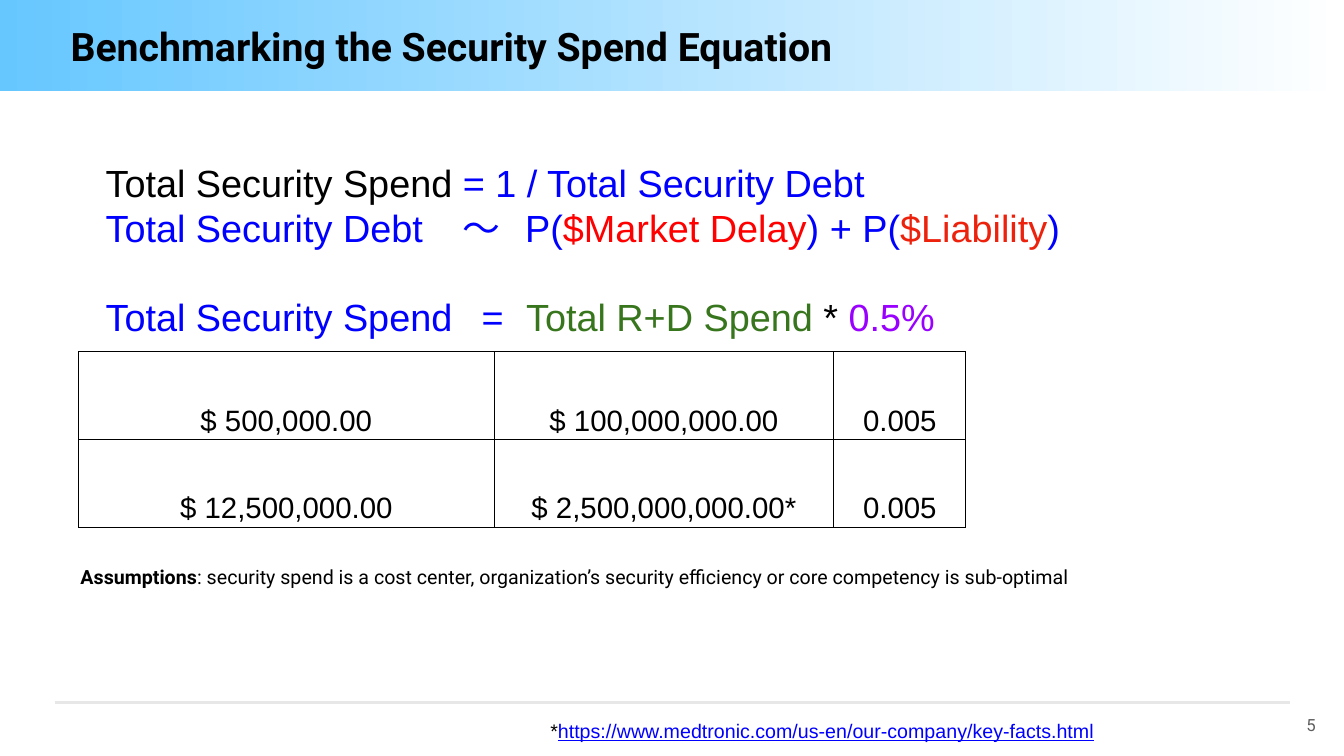
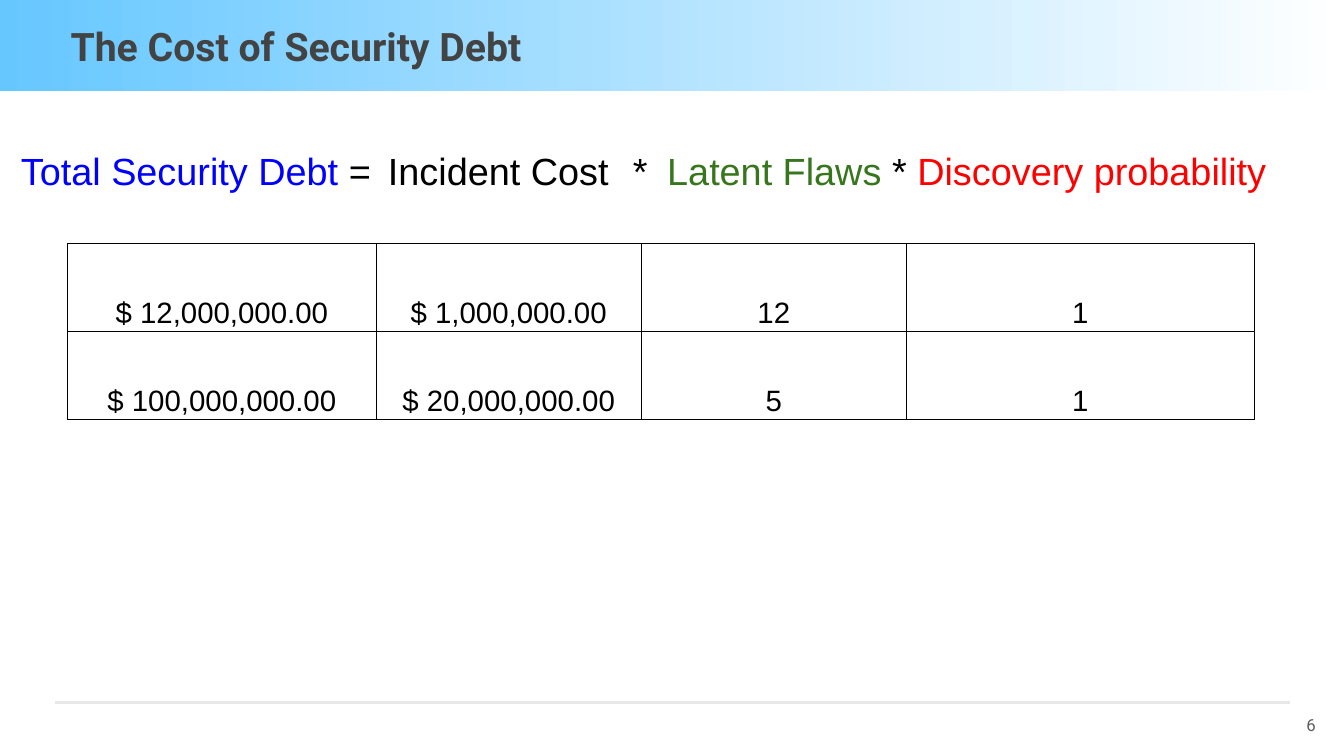
"""Build two slides on benchmarking security spend and the cost of security debt."""
import dataclasses

import lxml.etree
import pptx
import pptx.dml.color
import pptx.enum.shapes
import pptx.enum.text
import pptx.oxml.ns
import pptx.util

Inches = pptx.util.Inches
Pt = pptx.util.Pt
qn = pptx.oxml.ns.qn
Rgb = pptx.dml.color.RGBColor.from_string
Align = pptx.enum.text.PP_ALIGN
Anchor = pptx.enum.text.MSO_ANCHOR


@dataclasses.dataclass(frozen=True)
class Theme:
    heading_font: str = "Roboto"
    body_font: str = "Arial"
    black: str = "000000"
    charcoal: str = "434343"
    grey: str = "5E5E5E"
    rule: str = "E7E7E7"
    sky: str = "66C7FF"
    white: str = "FFFFFF"
    blue: str = "0000FF"
    red: str = "FF0000"
    brick: str = "ED220D"
    green: str = "38761D"
    purple: str = "9900FF"
    title_size: int = 28
    equation_size: int = 27
    table_size: int = 21
    note_size: int = 14
    number_size: int = 12


theme = Theme()


def add_spans(para, spans, size, font):
    for text, color, *styles in spans:
        span = para.add_run()
        span.text = text
        span.font.name = font
        span.font.size = Pt(size)
        span.font.color.rgb = Rgb(color)
        span.font.bold = "bold" in styles
        span.font.underline = "underline" in styles


def add_box(page, place, lines, size, font, inset=0.1, align=Align.LEFT):
    frame = page.shapes.add_textbox(*map(Inches, place)).text_frame
    frame.word_wrap = True
    frame.margin_left = frame.margin_right = Inches(inset)
    frame.margin_top = frame.margin_bottom = Inches(inset)
    for index, (spans, tabs, gap) in enumerate(lines):
        para = frame.add_paragraph() if index else frame.paragraphs[0]
        para.alignment = align
        if gap:
            para.space_before = Pt(gap)
        if tabs:
            tab_list = lxml.etree.SubElement(para._p.get_or_add_pPr(), qn("a:tabLst"))
            for stop in tabs:
                lxml.etree.SubElement(tab_list, qn("a:tab"), pos=str(Inches(stop)), algn="l")
        add_spans(para, spans, size, font)


slides = [
    {
        "title": ("Benchmarking the Security Spend Equation", theme.black),
        "equation_place": (0.95, 1.48, 12.2, 2.02),
        "equations": [
            ([("Total Security Spend", theme.black),
              (" = 1 / Total Security Debt", theme.blue)], [], 0),
            ([("Total Security Debt\t～\tP(", theme.blue), ("$Market Delay", theme.red),
              (") + P(", theme.blue), ("$Liability", theme.brick),
              (")", theme.blue)], [3.54, 4.16], 0),
            ([("Total Security Spend\t=\t", theme.blue), ("Total R+D Spend", theme.green),
              (" * ", theme.black), ("0.5%", theme.purple)], [3.73, 4.17], 31),
        ],
        "table_place": (0.78, 3.49),
        "columns": [4.12, 3.37, 1.31],
        "rows": [
            ["$ 500,000.00", "$ 100,000,000.00", "0.005"],
            ["$ 12,500,000.00", "$ 2,500,000,000.00*", "0.005"],
        ],
        "notes": [
            ((5.36, 7.03, 7.2, 0.44), theme.body_font,
             [("*", theme.black),
              ("https://www.medtronic.com/us-en/our-company/key-facts.html",
               theme.blue, "underline")]),
            ((0.7, 5.5, 10.26, 0.44), theme.heading_font,
             [("Assumptions", theme.black, "bold"),
              (": security spend is a cost center, organization’s security efficiency "
               "or core competency is sub-optimal", theme.black)]),
        ],
    },
    {
        "title": ("The Cost of Security Debt", theme.charcoal),
        "equation_place": (0.11, 1.37, 13.1, 0.76),
        "equations": [
            ([("Total Security Debt", theme.blue), (" =\tIncident Cost\t*\t", theme.black),
              ("Latent Flaws ", theme.green), ("* ", theme.black),
              ("Discovery probability", theme.red)], [3.64, 6.07, 6.41], 0),
        ],
        "table_place": (0.67, 2.42),
        "columns": [3.06, 2.63, 2.63, 3.45],
        "rows": [
            ["$ 12,000,000.00", "$ 1,000,000.00", "12", "1"],
            ["$ 100,000,000.00", "$ 20,000,000.00", "5", "1"],
        ],
        "notes": [],
    },
]
row_height = 0.87

deck = pptx.Presentation()
deck.slide_width = Inches(13.33)
deck.slide_height = Inches(7.5)

for number, content in enumerate(slides, start=5):
    page = deck.slides.add_slide(deck.slide_layouts[5])

    band = page.shapes.title
    band.left, band.top, band.width, band.height = map(Inches, (0, 0, 13.33, 0.9))
    band.fill.gradient()
    band.fill.gradient_angle = 0
    for stop, position, color in zip(band.fill.gradient_stops, (0, 1), (theme.sky, theme.white)):
        stop.position = position
        stop.color.rgb = Rgb(color)
    frame = band.text_frame
    frame.auto_size = pptx.enum.text.MSO_AUTO_SIZE.NONE
    frame.word_wrap = True
    frame.vertical_anchor = Anchor.MIDDLE
    frame.margin_left = Inches(0.7)
    frame.margin_top = frame.margin_right = frame.margin_bottom = Inches(0.08)
    frame.paragraphs[0].alignment = Align.LEFT
    add_spans(frame.paragraphs[0], [(*content["title"], "bold")],
              theme.title_size, theme.heading_font)

    rule = page.shapes.add_connector(
        pptx.enum.shapes.MSO_CONNECTOR.STRAIGHT, *map(Inches, (0.55, 6.97, 12.79, 6.97)))
    rule.line.color.rgb = Rgb(theme.rule)
    rule.line.width = Pt(2)
    lxml.etree.SubElement(rule._element.spPr, qn("a:effectLst"))
    add_box(page, (12.79, 7.03, 0.32, 0.31), [([(str(number), theme.grey)], [], 0)],
            theme.number_size, theme.heading_font, 0.06, Align.RIGHT)

    add_box(page, content["equation_place"], content["equations"],
            theme.equation_size, theme.body_font)
    for place, font, spans in content["notes"]:
        add_box(page, place, [(spans, [], 0)], theme.note_size, font)

    rows, columns = content["rows"], content["columns"]
    size = (sum(columns), row_height * len(rows))
    table = page.shapes.add_table(
        len(rows), len(columns), *map(Inches, content["table_place"] + size)).table
    table.first_row = table.horz_banding = False
    for column, width in zip(table.columns, columns):
        column.width = Inches(width)
    for row, values in zip(table.rows, rows):
        row.height = Inches(row_height)
        for cell, value in zip(row.cells, values):
            cell.vertical_anchor = Anchor.BOTTOM
            cell.margin_left = cell.margin_right = Inches(0.03)
            cell.margin_top = cell.margin_bottom = Inches(0.02)
            para = cell.text_frame.paragraphs[0]
            para.alignment = Align.CENTER
            para.line_spacing = 1.15
            add_spans(para, [(value, theme.black)], theme.table_size, theme.body_font)
            properties = cell._tc.get_or_add_tcPr()
            for side in ("a:lnL", "a:lnR", "a:lnT", "a:lnB"):
                border = lxml.etree.SubElement(properties, qn(side), w=str(Pt(0.75)))
                paint = lxml.etree.SubElement(border, qn("a:solidFill"))
                lxml.etree.SubElement(paint, qn("a:srgbClr"), val=theme.black)
            cell.fill.background()

deck.save("out.pptx")
